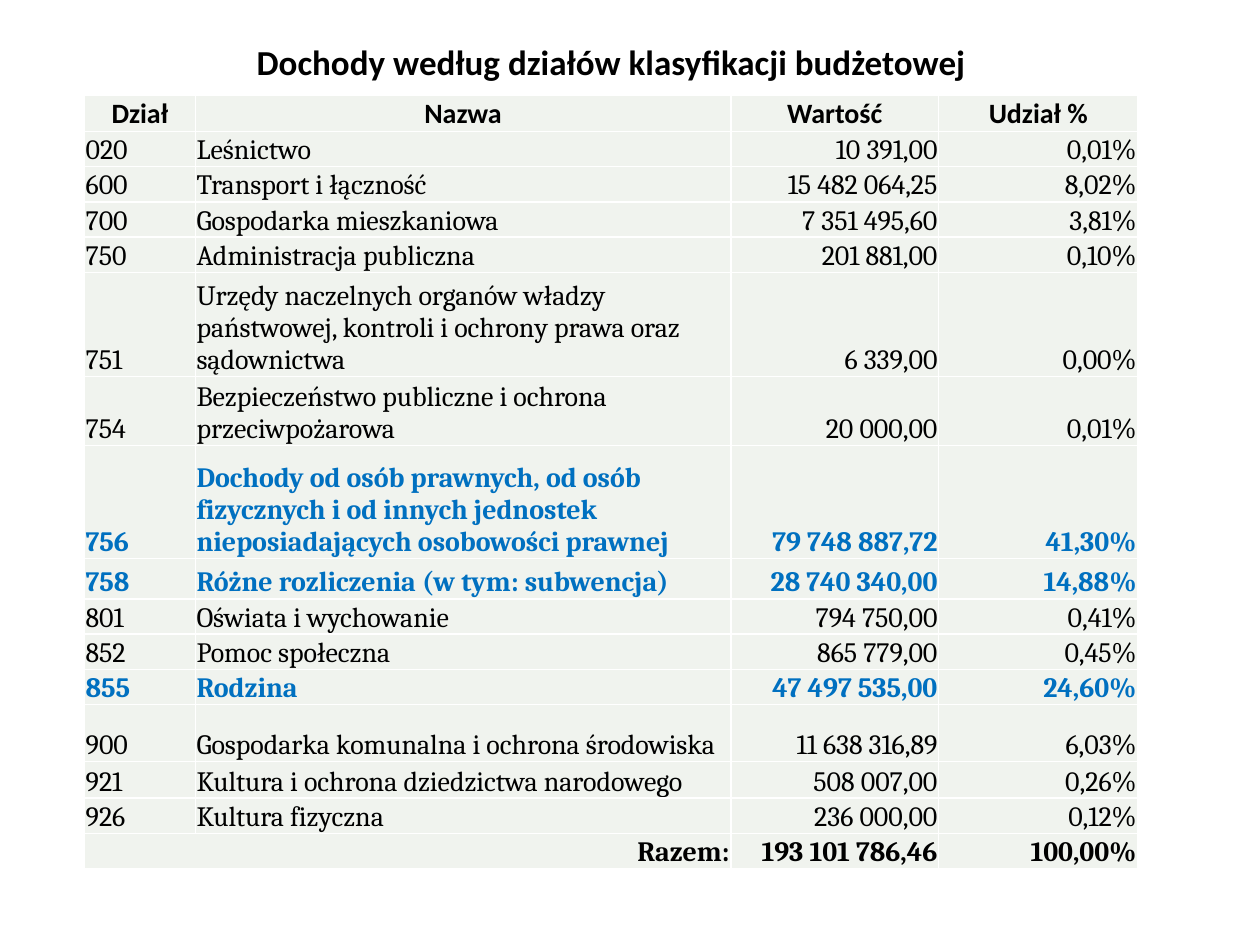
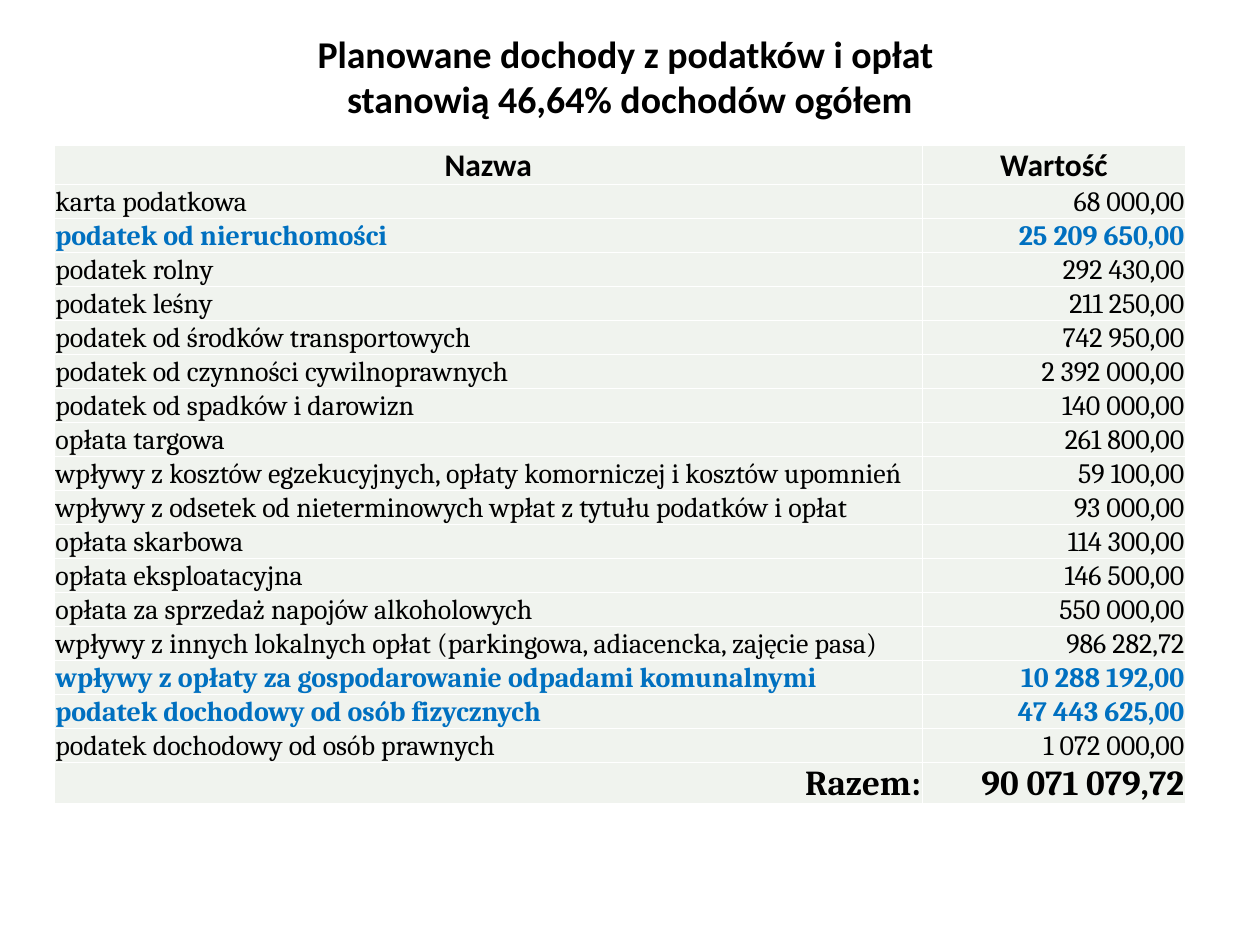
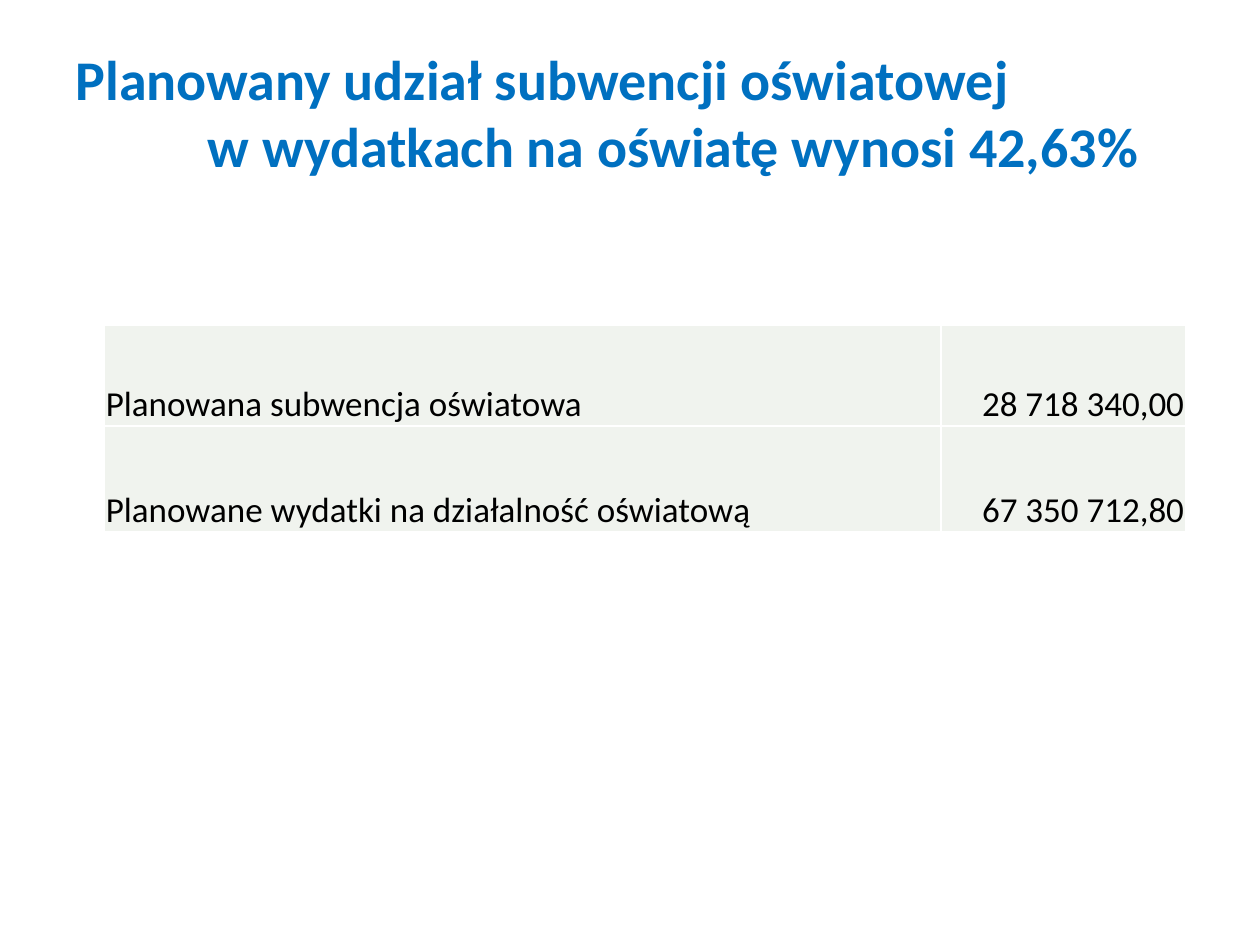
from pptx import Presentation
from pptx.dml.color import RGBColor
from pptx.enum.text import MSO_ANCHOR as Anchor, MSO_AUTO_SIZE as AutoSize, PP_ALIGN as Align
from pptx.oxml import parse_xml
from pptx.oxml.ns import nsdecls
from pptx.util import Inches, Pt

BLACK = RGBColor(0x00, 0x00, 0x00)
BLUE = RGBColor(0x00, 0x70, 0xC0)
PALE = RGBColor(0xF0, 0xF3, 0xEE)
WHITE = RGBColor(0xFF, 0xFF, 0xFF)
SANS, SERIF = "Calibri", "Cambria"

HEAD = dict(font=SANS, size=16, bold=True)
BODY = dict(font=SERIF, size=16)
KEY = dict(font=SERIF, size=16, bold=True, color=BLUE)
TOTAL = dict(font=SERIF, size=16, bold=True)
BIG_HEAD = dict(HEAD, size=18)
BIG_TOTAL = dict(TOTAL, size=20)
PLAIN = dict(font=SANS, size=20)

L, C, R = Align.LEFT, Align.CENTER, Align.RIGHT
ROW = 0.28

SECTIONS = [
    (HEAD, 1, "Dział", "Nazwa", "Wartość", "Udział %"),
    (BODY, 1, "020", "Leśnictwo", "10 391,00", "0,01%"),
    (BODY, 1, "600", "Transport i łączność", "15 482 064,25", "8,02%"),
    (BODY, 1, "700", "Gospodarka mieszkaniowa", "7 351 495,60", "3,81%"),
    (BODY, 1, "750", "Administracja publiczna", "201 881,00", "0,10%"),
    (BODY, 2.95, "751", "Urzędy naczelnych organów władzy państwowej, kontroli i ochrony prawa "
     "oraz sądownictwa", "6 339,00", "0,00%"),
    (BODY, 1.96, "754", "Bezpieczeństwo publiczne i ochrona przeciwpożarowa", "20 000,00", "0,01%"),
    (KEY, 3.21, "756", "Dochody od osób prawnych, od osób fizycznych i od innych jednostek "
     "nieposiadających osobowości prawnej", "79 748 887,72", "41,30%"),
    (KEY, 1.14, "758", "Różne rozliczenia (w tym: subwencja)", "28 740 340,00", "14,88%"),
    (BODY, 1, "801", "Oświata i wychowanie", "794 750,00", "0,41%"),
    (BODY, 1, "852", "Pomoc społeczna", "865 779,00", "0,45%"),
    (KEY, 1, "855", "Rodzina", "47 497 535,00", "24,60%"),
    (BODY, 1.61, "900", "Gospodarka komunalna i ochrona środowiska", "11 638 316,89", "6,03%"),
    (BODY, 1.04, "921", "Kultura i ochrona dziedzictwa narodowego", "508 007,00", "0,26%"),
    (BODY, 1, "926", "Kultura fizyczna", "236 000,00", "0,12%"),
    (TOTAL, 1, "Razem:", None, "193 101 786,46", "100,00%"),
]

TAXES = [
    (BIG_HEAD, "Nazwa", "Wartość"),
    (BODY, "karta podatkowa", "68 000,00"),
    (KEY, "podatek od nieruchomości", "25 209 650,00"),
    (BODY, "podatek rolny", "292 430,00"),
    (BODY, "podatek leśny", "211 250,00"),
    (BODY, "podatek od środków transportowych", "742 950,00"),
    (BODY, "podatek od czynności cywilnoprawnych", "2 392 000,00"),
    (BODY, "podatek od spadków i darowizn", "140 000,00"),
    (BODY, "opłata targowa", "261 800,00"),
    (BODY, "wpływy z kosztów egzekucyjnych, opłaty komorniczej i kosztów upomnień", "59 100,00"),
    (BODY, "wpływy z odsetek od nieterminowych wpłat z tytułu podatków i opłat", "93 000,00"),
    (BODY, "opłata skarbowa", "114 300,00"),
    (BODY, "opłata eksploatacyjna", "146 500,00"),
    (BODY, "opłata za sprzedaż napojów alkoholowych", "550 000,00"),
    (BODY, "wpływy z innych lokalnych opłat (parkingowa, adiacencka, zajęcie pasa)", "986 282,72"),
    (KEY, "wpływy z opłaty za gospodarowanie odpadami komunalnymi", "10 288 192,00"),
    (KEY, "podatek dochodowy od osób fizycznych", "47 443 625,00"),
    (BODY, "podatek dochodowy od osób prawnych", "1 072 000,00"),
    (BIG_TOTAL, "Razem:", "90 071 079,72"),
]

EDUCATION = [
    (PLAIN, "Planowana subwencja oświatowa", "28 718 340,00"),
    (PLAIN, "Planowane wydatki na działalność oświatową", "67 350 712,80"),
]

SLIDES = [
    dict(title=[("Dochody według działów klasyfikacji budżetowej", C)],
         box=(0.35, 0.21, 9, 0.55), style=dict(HEAD, size=20),
         at=(0.67, 0.76), cols=(0.88, 4.25, 1.65, 1.58), aligns=(L, L, R, R),
         heights=[ROW * share for _, share, *_ in SECTIONS],
         rows=[(style, *texts) for style, _, *texts in SECTIONS]),
    dict(title=[("Planowane dochody z podatków i opłat ", C),
                ("stanowią 46,64% dochodów ogółem", C)],
         box=(0.5, 0.3, 9, 0.61), style=dict(HEAD, size=21.6),
         at=(0.43, 1.15), cols=(6.89, 2.09), aligns=(L, R),
         heights=[0.27] * len(TAXES), rows=TAXES),
    dict(title=[("Planowany udział subwencji oświatowej", L),
                ("w wydatkach na oświatę wynosi 42,63%", R)],
         box=(0.5, 0.3, 9, 1.63), style=dict(HEAD, size=32, color=BLUE),
         anchor=Anchor.TOP, right=0.46,
         at=(0.83, 2.58), cols=(6.64, 1.94), aligns=(L, R),
         heights=[0.8, 0.84], rows=EDUCATION),
]


def add_text(p, text, align, font, size, bold=False, color=BLACK):
    p.alignment = align
    r = p.add_run()
    r.text = text
    r.font.name, r.font.size, r.font.bold = font, Pt(size), bold
    r.font.color.rgb = color


def add_title(s, title, box, style, anchor=Anchor.MIDDLE, right=0.1):
    sp = s.shapes.title
    sp.left, sp.top, sp.width, sp.height = map(Inches, box)
    tf = sp.text_frame
    tf.word_wrap, tf.auto_size = True, AutoSize.NONE
    tf.vertical_anchor, tf.margin_right = anchor, Inches(right)
    for i, (text, align) in enumerate(title):
        p = tf.add_paragraph() if i else tf.paragraphs[0]
        p.space_before = Pt(0)
        add_text(p, text, align, **style)


def format_cell(cell):
    cell.vertical_anchor = Anchor.BOTTOM
    cell.margin_left = cell.margin_right = cell.margin_top = Inches(0.01)
    cell.margin_bottom = 0
    tc_pr = cell._tc.get_or_add_tcPr()
    for side in ("lnL", "lnR", "lnT", "lnB"):
        tc_pr.append(parse_xml(
            f'<a:{side} {nsdecls("a")} w="{Pt(1)}"><a:solidFill>'
            f'<a:srgbClr val="{WHITE}"/></a:solidFill></a:{side}>'))
    cell.fill.solid()
    cell.fill.fore_color.rgb = PALE


def add_table(s, at, cols, aligns, heights, rows):
    x, y = at
    frame = s.shapes.add_table(len(rows), len(cols), Inches(x), Inches(y),
                               Inches(sum(cols)), Inches(sum(heights)))
    table = frame.table
    table.first_row = table.horz_banding = False
    for col, width in zip(table.columns, cols):
        col.width = Inches(width)
    for i, (style, *texts) in enumerate(rows):
        table.rows[i].height = Inches(heights[i])
        for j, text in enumerate(texts):
            cell = table.cell(i, j)
            format_cell(cell)
            if text is None:
                table.cell(i, j - 1).merge(cell)
                continue
            align = aligns[j]
            if style in (HEAD, BIG_HEAD):
                align = C
            elif style in (TOTAL, BIG_TOTAL):
                align = R
            add_text(cell.text_frame.paragraphs[0], text, align, **style)


def main():
    prs = Presentation()
    prs.slide_width, prs.slide_height = Inches(10), Inches(7.5)
    for content in SLIDES:
        s = prs.slides.add_slide(prs.slide_layouts[5])
        title_keys = ("title", "box", "style", "anchor", "right")
        add_title(s, **{k: v for k, v in content.items() if k in title_keys})
        add_table(s, **{k: v for k, v in content.items() if k not in title_keys})
    prs.save("out.pptx")


if __name__ == "__main__":
    main()
